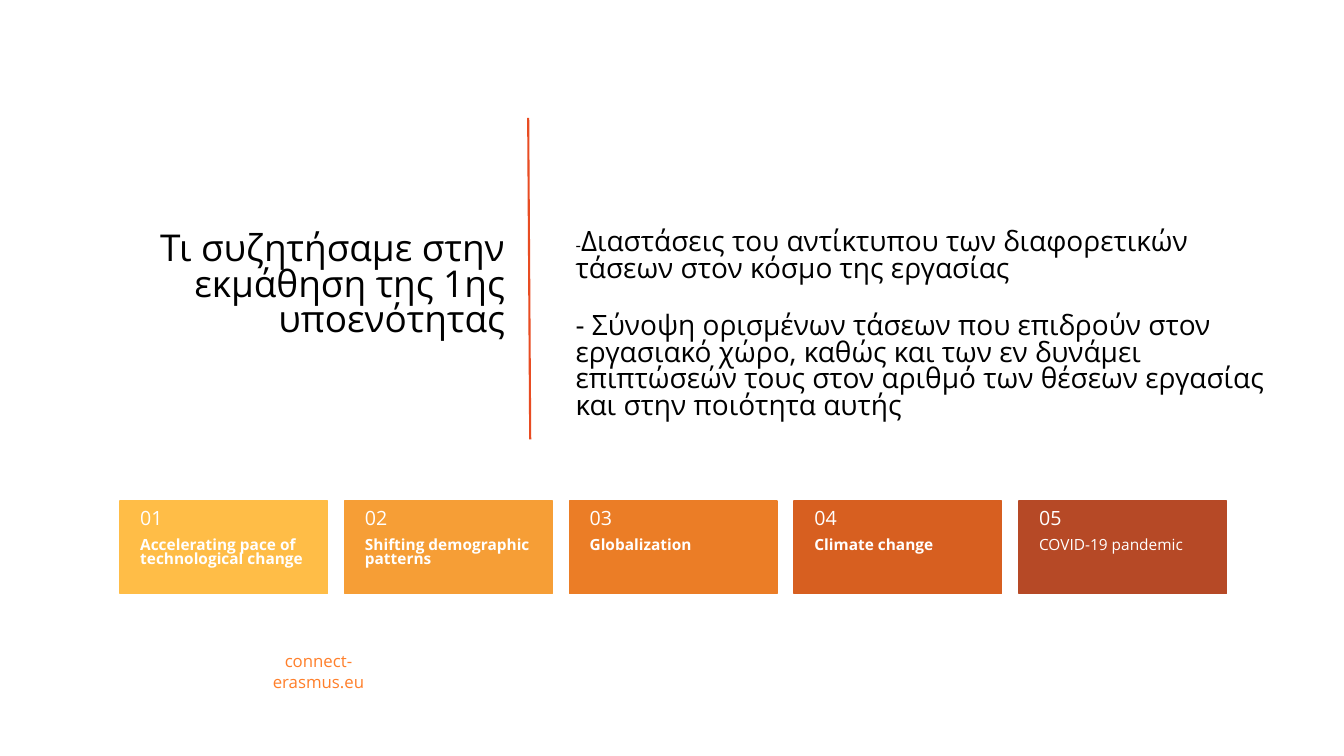
"""Build the slide that recaps the first subunit and its five trends."""
import pptx
import pptx.util
import pptx.dml.color
import pptx.enum.text
import pptx.enum.shapes
import pptx.oxml
import pptx.oxml.ns

ALIGN = pptx.enum.text.PP_ALIGN
ANCHOR = pptx.enum.text.MSO_ANCHOR
THEME = {
    "font": "Open Sans", "ink": "000000", "white": "FFFFFF",
    "link": "FF7F2A", "rule": "E84C22",
    "cards": ["FFBD47", "F69E36", "EB7D26", "D75F20", "B64926"],
    "heading": 26.4, "body": 20, "number": 14, "small": 12, "label": 11,
}
TRENDS = [
    "Accelerating pace of technological change",
    "Shifting demographic patterns",
    "Globalization",
    "Climate change",
    "COVID-19 pandemic",
]

deck = pptx.Presentation()
deck.slide_width = pptx.util.Inches(13.33)
deck.slide_height = pptx.util.Inches(7.5)
page = deck.slides.add_slide(deck.slide_layouts[5])


def share(left, top, width, height):
    """Turn percentages of the slide into lengths."""
    across, down = deck.slide_width / 100, deck.slide_height / 100
    return [round(left * across), round(top * down), round(width * across), round(height * down)]


def write(box, lines, size, color, align, anchor, bold=False, spacing=0.9, insets=(0.1, 0.05, 0.1, 0.05)):
    """Fill a text box and format its paragraphs."""
    frame = box.text_frame
    frame.text = "\n".join(lines)
    frame.word_wrap = True
    frame.auto_size = pptx.enum.text.MSO_AUTO_SIZE.NONE
    frame.vertical_anchor = anchor
    frame.margin_left, frame.margin_top, frame.margin_right, frame.margin_bottom = map(pptx.util.Inches, insets)
    for para in frame.paragraphs:
        para.alignment = align
        para.line_spacing = spacing
        for span in para.runs:
            span.font.name = THEME["font"]
            span.font.size = pptx.util.Pt(size)
            span.font.bold = bold
            span.font.color.rgb = pptx.dml.color.RGBColor.from_string(color)


title = page.shapes.title
title.left, title.top, title.width, title.height = share(42.08, 24.93, 53.1, 31.47)
write(title, [
    "-Διαστάσεις του αντίκτυπου των διαφορετικών τάσεων στον κόσμο της εργασίας",
    "- Σύνοψη ορισμένων τάσεων που επιδρούν στον εργασιακό χώρο, καθώς και των εν δυνάμει "
    "επιπτώσεών τους στον αριθμό των θέσεων εργασίας και στην ποιότητα αυτής",
], THEME["body"], THEME["ink"], ALIGN.LEFT, ANCHOR.BOTTOM, spacing=0.8)
first = title.text_frame.paragraphs[0]
first.space_after = pptx.util.Pt(21.6)
dash = first.runs[0]
rest = first.add_run()
rest.text = dash.text[1:]
dash.text = dash.text[:1]
rest.font.name = THEME["font"]
rest.font.size = dash.font.size
rest.font.bold = False
rest.font.color.rgb = dash.font.color.rgb
dash.font.size = pptx.util.Pt(THEME["small"])

website = page.shapes.add_textbox(*share(17.1, 86.8, 13.2, 4))
write(website, ["connect-erasmus.eu"], THEME["small"], THEME["link"], ALIGN.CENTER, ANCHOR.MIDDLE, spacing=1.0)

heading = page.shapes.add_textbox(*share(6.08, 18.27, 32.25, 27.33))
write(heading, ["Τι συζητήσαμε στην εκμάθηση της 1ης υποενότητας"],
      THEME["heading"], THEME["ink"], ALIGN.RIGHT, ANCHOR.BOTTOM, spacing=0.8)

start_x, start_y, end_x, end_y = share(39.3, 15.6, 39.45, 58.13)
divider = page.shapes.add_connector(pptx.enum.shapes.MSO_CONNECTOR.STRAIGHT, start_x, start_y, end_x, end_y)
divider.line.color.rgb = pptx.dml.color.RGBColor.from_string(THEME["rule"])
divider.line.width = pptx.util.Pt(1.5)
divider._element.spPr.append(pptx.oxml.parse_xml(f"<a:effectLst {pptx.oxml.ns.nsdecls('a')}/>"))

cards = page.shapes.add_group_shape()
for index, (trend, color) in enumerate(zip(TRENDS, THEME["cards"])):
    left = 8.93 + 16.72 * index
    card = cards.shapes.add_shape(pptx.enum.shapes.MSO_SHAPE.RECTANGLE, *share(left, 66.27, 15.45, 12.27))
    card.shadow.inherit = False
    card.fill.solid()
    card.fill.fore_color.rgb = card.line.color.rgb = pptx.dml.color.RGBColor.from_string(color)
    card.line.width = pptx.util.Pt(1)
    label = cards.shapes.add_textbox(*share(left, 71.2, 15.45, 7.33))
    write(label, [trend], THEME["label"], THEME["white"], ALIGN.LEFT, ANCHOR.TOP,
          bold=index < 4, spacing=0.8, insets=(0.2, 0, 0.2, 0.36))
    number = cards.shapes.add_textbox(*share(left, 66.27, 15.45, 4.93))
    write(number, [f"{index + 1:02}"], THEME["number"], THEME["white"], ALIGN.LEFT, ANCHOR.MIDDLE,
          insets=(0.2, 0.18, 0.2, 0.18))

deck.save("out.pptx")
